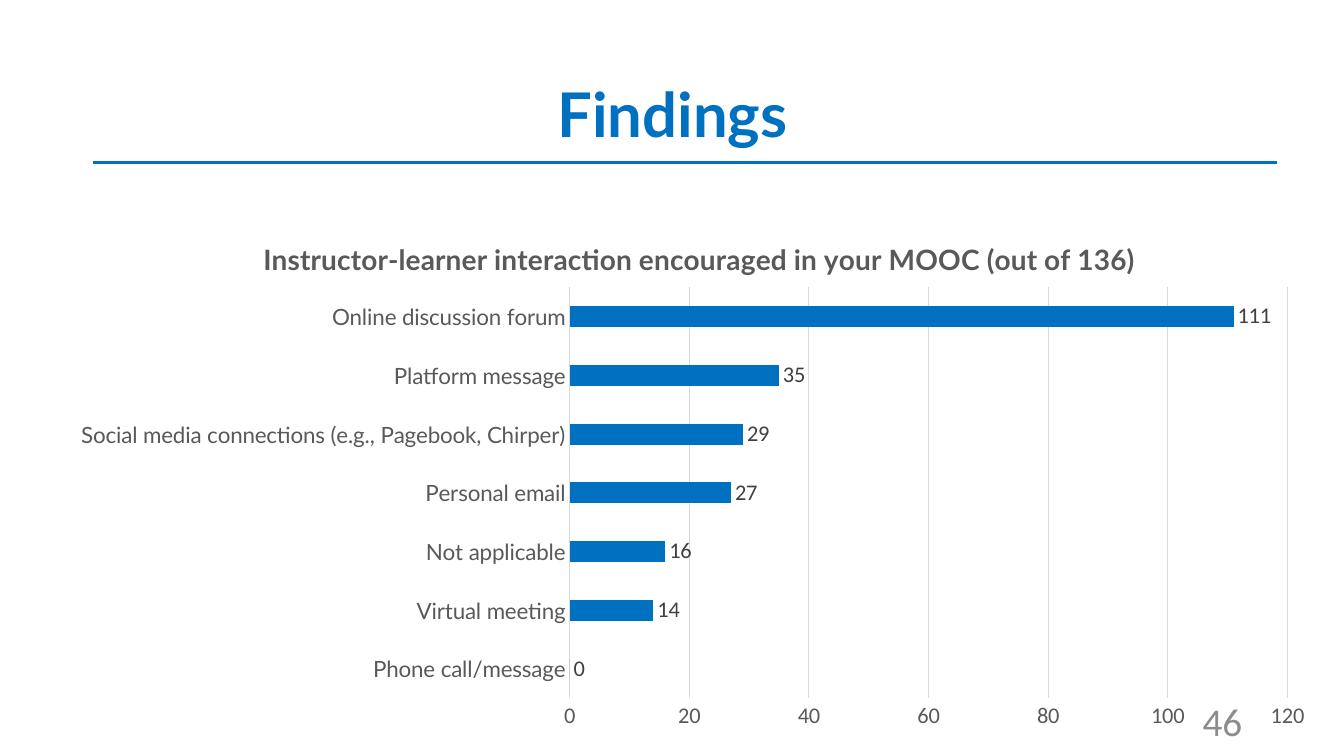
from lxml import etree
from pptx import Presentation
from pptx import util as u
from pptx.chart.data import CategoryChartData
from pptx.dml.color import RGBColor
from pptx.enum import chart as ch, shapes, text
from pptx.oxml import parse_xml
from pptx.oxml.ns import nsdecls, qn

PX = 9144  # EMU per px, 100 px to the inch
BLUE, GREY, PALE = "0070C0", "595959", "D9D9D9"
HEADING, BODY = "Lato", "Calibri"

INTERACTIONS = {
    "Phone call/message": 0,
    "Virtual meeting": 14,
    "Not applicable": 16,
    "Personal email": 27,
    "Social media connections (e.g., Pagebook, Chirper)": 29,
    "Platform message": 35,
    "Online discussion forum": 111,
}


def rgb(value):
    return RGBColor.from_string(value)


def style_font(font, size, color, name=BODY, bold=False):
    font.size, font.name, font.bold = u.Pt(size), name, bold
    font.color.rgb = rgb(color)


def write(frame, words, align, anchor=text.MSO_ANCHOR.MIDDLE, spacing=1.0, **style):
    frame.word_wrap = True
    frame.vertical_anchor = anchor
    line = frame.paragraphs[0]
    line.alignment, line.line_spacing = align, spacing
    run = line.add_run()
    run.text = words
    style_font(run.font, **style)


def place(parent, index, frame, box, inner=False):
    """Fix a chart part at a px box, given as fractions of the chart frame."""
    for old in parent.findall(qn("c:layout")):
        parent.remove(old)
    target = '<c:layoutTarget val="inner"/>' if inner else ""
    layout = parse_xml(f'<c:layout {nsdecls("c")}><c:manualLayout>{target}'
                       '<c:xMode val="edge"/><c:yMode val="edge"/></c:manualLayout></c:layout>')
    left, top, width, height = frame
    fractions = [(box[0] - left) / width, (box[1] - top) / height]
    fractions += [side / whole for side, whole in zip(box[2:], (width, height))]
    for tag, fraction in zip("xywh", fractions):
        etree.SubElement(layout[0], qn(f"c:{tag}")).set("val", f"{fraction:.4f}")
    parent.insert(index, layout)


class Deck:
    def __init__(self, width, height):
        self.prs = Presentation()
        self.prs.slide_width, self.prs.slide_height = width * PX, height * PX
        self.slide = self.prs.slides.add_slide(self.prs.slide_layouts[5])

    def title(self, words, box):
        heading = self.slide.shapes.title
        heading.left, heading.top, heading.width, heading.height = (n * PX for n in box)
        write(heading.text_frame, words, text.PP_ALIGN.CENTER, spacing=0.9,
              size=44, color=BLUE, name=HEADING, bold=True)

    def rule(self, left, right, y):
        line = self.slide.shapes.add_connector(
            shapes.MSO_CONNECTOR.STRAIGHT, left * PX, y * PX, right * PX, y * PX)
        line.line.color.rgb, line.line.width = rgb(BLUE), u.Pt(2)
        etree.SubElement(line._element.spPr, qn("a:effectLst"))

    def label(self, words, box, align, **style):
        note = self.slide.shapes.add_textbox(*(n * PX for n in box))
        write(note.text_frame, words, align, **style)

    def bar_chart(self, heading, values, box, heading_at, plot_box):
        data = CategoryChartData(number_format="0")
        data.categories = list(values)
        data.add_series("Series 1", list(values.values()))
        chart = self.slide.shapes.add_chart(
            ch.XL_CHART_TYPE.BAR_CLUSTERED, *(n * PX for n in box), data).chart
        style_font(chart.font, 10, "000000")
        chart.has_legend = False

        # Heading
        chart.has_title = True
        title_run = chart.chart_title.text_frame.paragraphs[0].add_run()
        title_run.text = heading
        style_font(title_run.font, 20, GREY, HEADING, bold=True)

        # Axes
        categories, scale = chart.category_axis, chart.value_axis
        for axis, name in ((categories, HEADING), (scale, BODY)):
            axis.major_tick_mark = axis.minor_tick_mark = ch.XL_TICK_MARK.NONE
            style_font(axis.tick_labels.font, 16, GREY, name)
        scale.minimum_scale, scale.maximum_scale, scale.major_unit = 0, 120, 20
        scale.has_major_gridlines = True
        scale.format.line.fill.background()
        for line in (categories.format.line, scale.major_gridlines.format.line):
            line.color.rgb, line.width = rgb(PALE), u.Pt(0.75)

        # Bars and their values
        plot = chart.plots[0]
        plot.gap_width, plot.vary_by_categories = 182, False
        fill = plot.series[0].format.fill
        fill.solid()
        fill.fore_color.rgb = rgb(BLUE)
        plot.has_data_labels = True
        labels = plot.data_labels
        labels.show_value = True
        labels.number_format, labels.number_format_is_linked = "0", False
        labels.position = ch.XL_LABEL_POSITION.OUTSIDE_END
        style_font(labels.font, 16, "404040")

        # Layout and clear background
        body = chart.element.find(qn("c:chart"))
        place(body.find(qn("c:title")), 1, box, heading_at)
        place(body.find(qn("c:plotArea")), 0, box, plot_box, inner=True)
        body.addnext(parse_xml(f'<c:spPr {nsdecls("c", "a")}><a:noFill/>'
                               '<a:ln><a:noFill/></a:ln></c:spPr>'))


def main():
    deck = Deck(1333, 750)
    deck.title("Findings", (92, 44, 1150, 145))
    deck.rule(92, 1267, 161)
    # Page number
    deck.label("46", (942, 695, 300, 40), text.PP_ALIGN.RIGHT, size=28, color="8C8C8C")
    deck.bar_chart("Instructor-learner interaction encouraged in your MOOC (out of 136)",
                   INTERACTIONS, (59, 207, 1259, 528),
                   heading_at=(256, 232), plot_box=(565, 285, 712, 408))
    deck.prs.save("out.pptx")


if __name__ == "__main__":
    main()
